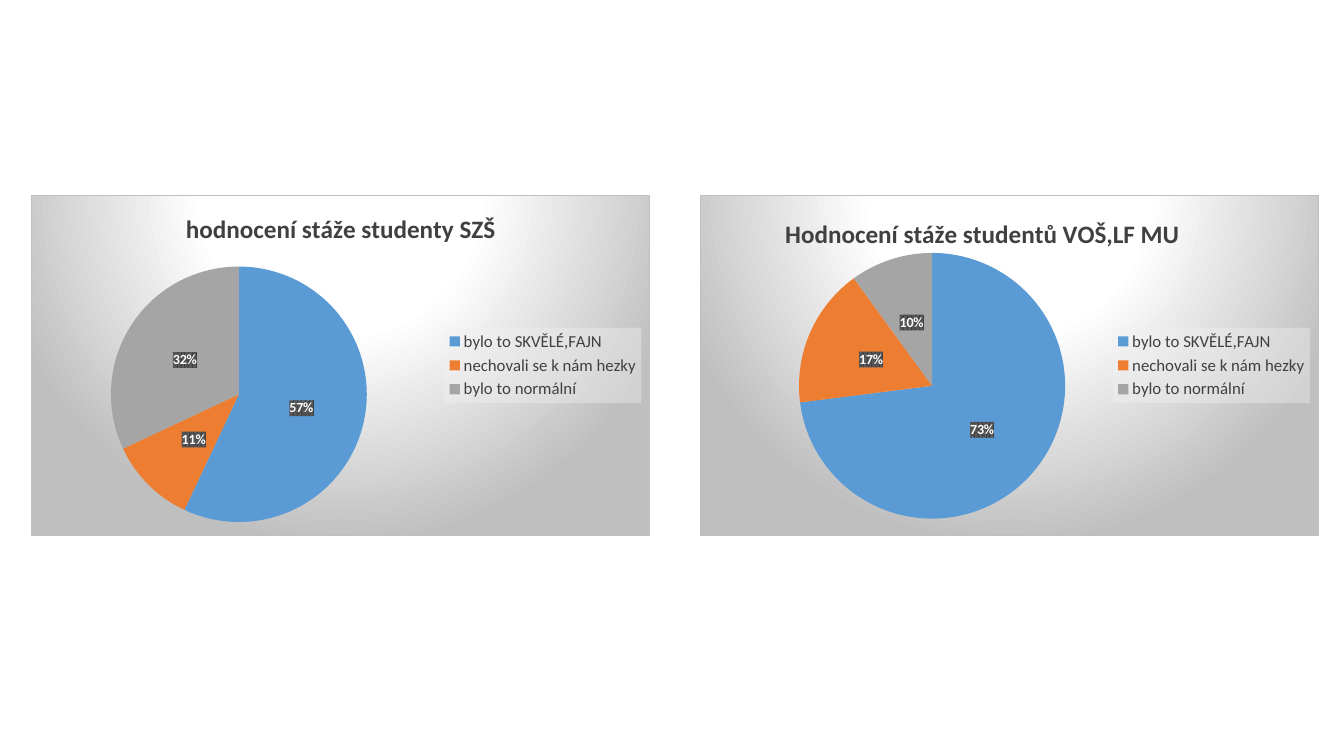
from lxml.etree import fromstring
from pptx import Presentation
from pptx.chart.data import CategoryChartData
from pptx.dml.color import RGBColor
from pptx.enum.chart import XL_CHART_TYPE, XL_LABEL_POSITION, XL_LEGEND_POSITION
from pptx.util import Inches, Pt

SPACE = ('xmlns:c="http://schemas.openxmlformats.org/drawingml/2006/chart" '
         'xmlns:a="http://schemas.openxmlformats.org/drawingml/2006/main"')

# Panel, legend and label fills
PANEL = '''<a:gradFill><a:gsLst>
<a:gs pos="0"><a:srgbClr val="FFFFFF"/></a:gs>
<a:gs pos="39000"><a:srgbClr val="FFFFFF"/></a:gs>
<a:gs pos="100000"><a:srgbClr val="BFBFBF"/></a:gs></a:gsLst>
<a:path path="circle"><a:fillToRect l="50000" t="-80000" r="50000" b="180000"/></a:path>
</a:gradFill><a:ln w="9525"><a:solidFill><a:srgbClr val="BFBFBF"/></a:solidFill></a:ln>'''
PALE = '''<a:solidFill><a:srgbClr val="F2F2F2"><a:alpha val="39000"/></a:srgbClr>
</a:solidFill><a:ln><a:noFill/></a:ln>'''
DARK = '''<a:pattFill prst="pct75"><a:fgClr><a:srgbClr val="404040"/></a:fgClr>
<a:bgClr><a:srgbClr val="595959"/></a:bgClr></a:pattFill><a:ln><a:noFill/></a:ln>'''

# Font formats
BASE = {"name": "Calibri", "size": Pt(10)}
HEAD = {"name": "Calibri", "size": Pt(18), "bold": True}
KEY = {"name": "Calibri", "size": Pt(12)}
MARK = {"name": "Calibri", "size": Pt(10), "bold": True}

CATS = ("bylo to SKVĚLÉ,FAJN", "nechovali se k nám hezky", "bylo to normální")
HUES = ("5B9BD5", "ED7D31", "A5A5A5")


def color(code):
    return RGBColor.from_string(code)


def node(text):
    return fromstring(f"<root {SPACE}>{text}</root>")[0]


class Deck:
    def __init__(self, wide, high):
        self.file = Presentation()
        self.file.slide_width = self.wide = Inches(wide)
        self.file.slide_height = self.high = Inches(high)
        self.slide = self.file.slides.add_slide(self.file.slide_layouts[6])

    def box(self, left, top, width, height):
        """Turn percentages of the slide into lengths."""
        return (int(self.wide * left / 100), int(self.high * top / 100),
                int(self.wide * width / 100), int(self.high * height / 100))

    def style(self, font, form, hue):
        for key, value in form.items():
            setattr(font, key, value)
        font.color.rgb = color(hue)

    def shade(self, part, fill):
        part.find("{*}txPr").addprevious(node(f"<c:spPr>{fill}</c:spPr>"))

    def place(self, part, index, **spots):
        """Set a manual layout in shares of the chart."""
        for old in part.findall("{*}layout"):
            part.remove(old)
        inner = '<c:layoutTarget val="inner"/>' if "w" in spots else ""
        modes = '<c:xMode val="edge"/><c:yMode val="edge"/>'
        sizes = "".join(f'<c:{key} val="{val}"/>' for key, val in spots.items())
        part.insert(index, node(
            f"<c:layout><c:manualLayout>{inner}{modes}{sizes}</c:manualLayout></c:layout>"))

    def pie(self, area, title, values, plot, spot):
        data = CategoryChartData()
        data.categories = CATS
        data.add_series("Series 1", values)
        chart = self.slide.shapes.add_chart(XL_CHART_TYPE.PIE, *self.box(*area), data).chart
        root = chart.element
        root.find("{*}chart").addprevious(node('<c:roundedCorners val="0"/>'))

        # Panel and plot
        self.style(chart.font, BASE, "000000")
        self.shade(root, PANEL)
        self.place(root.find(".//{*}plotArea"), 0, **plot)

        # Title
        chart.has_title = True
        frame = chart.chart_title.text_frame
        frame.text = title
        self.style(frame.paragraphs[0].runs[0].font, HEAD, "404040")
        if spot:
            self.place(root.find(".//{*}title"), 1, **spot)

        # Legend
        chart.has_legend = True
        legend = chart.legend
        legend.position = XL_LEGEND_POSITION.RIGHT
        legend.include_in_layout = False
        self.style(legend.font, KEY, "404040")
        self.shade(root.find(".//{*}legend"), PALE)

        # Slices and labels
        chart.plots[0].vary_by_categories = True
        series = chart.plots[0].series[0]
        for index, hue in enumerate(HUES):
            fill = series.points[index].format.fill
            fill.solid()
            fill.fore_color.rgb = color(hue)
        labels = series.data_labels
        form = {"show_percentage": True, "show_value": False, "number_format": "0%",
                "number_format_is_linked": False, "position": XL_LABEL_POSITION.CENTER}
        for key, value in form.items():
            setattr(labels, key, value)
        self.style(labels.font, MARK, "FFFFFF")
        self.shade(root.find(".//{*}ser/{*}dLbls"), DARK)


def main():
    deck = Deck(13.33, 7.5)
    pies = (
        ("hodnocení stáže studenty SZŠ", (57, 11, 32),
         {"x": 0.03, "y": 0.21, "w": 0.61, "h": 0.75}, None),
        ("Hodnocení stáže studentů VOŠ,LF MU", (73, 17, 10),
         {"x": 0.03, "y": 0.17, "w": 0.69, "h": 0.78}, {"x": 0.13, "y": 0.05}),
    )
    for col, pie in enumerate(pies):
        deck.pie((2.33 + col * 49.74, 25.73, 46.06, 45.2), *pie)
    deck.file.save("out.pptx")


if __name__ == "__main__":
    main()
